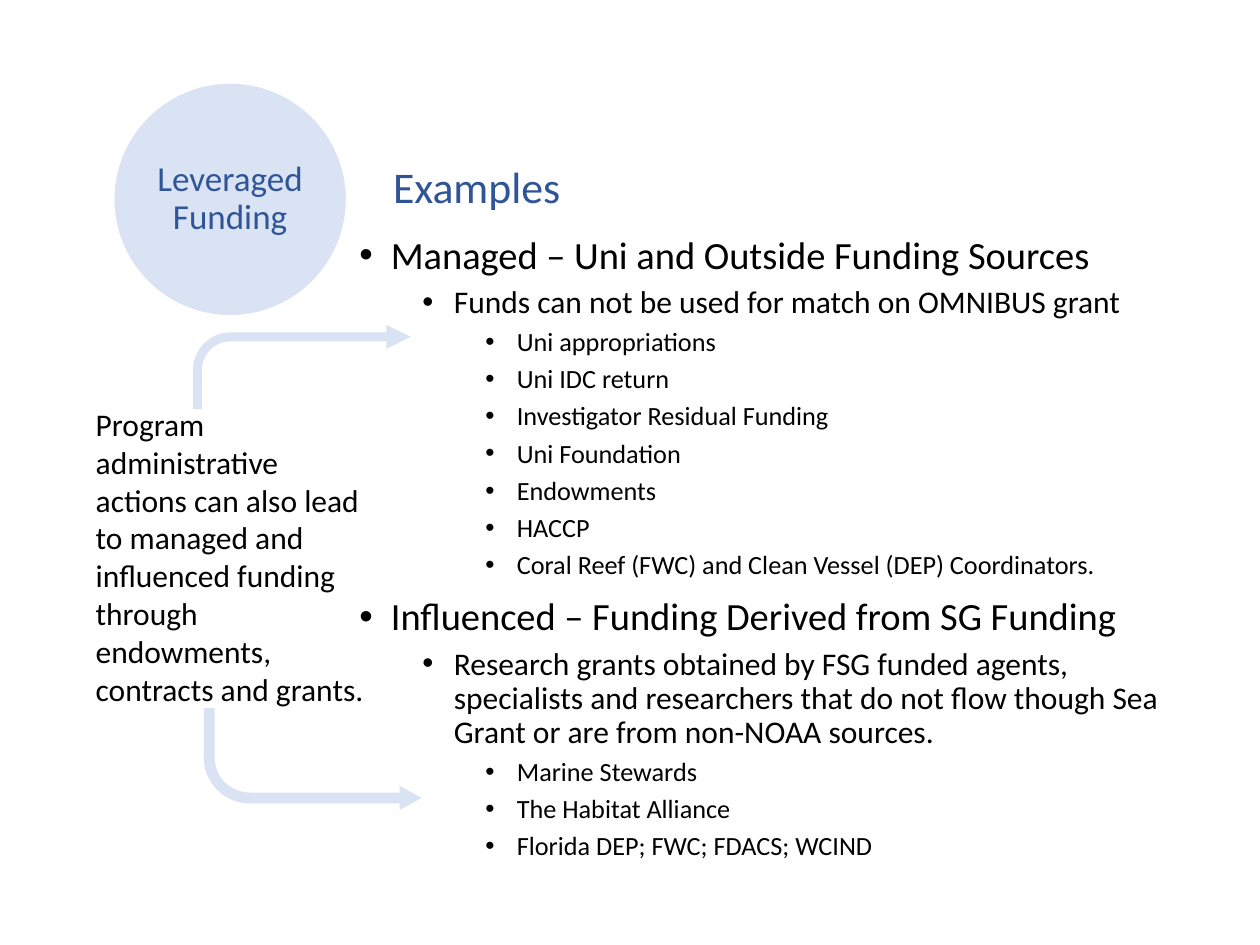
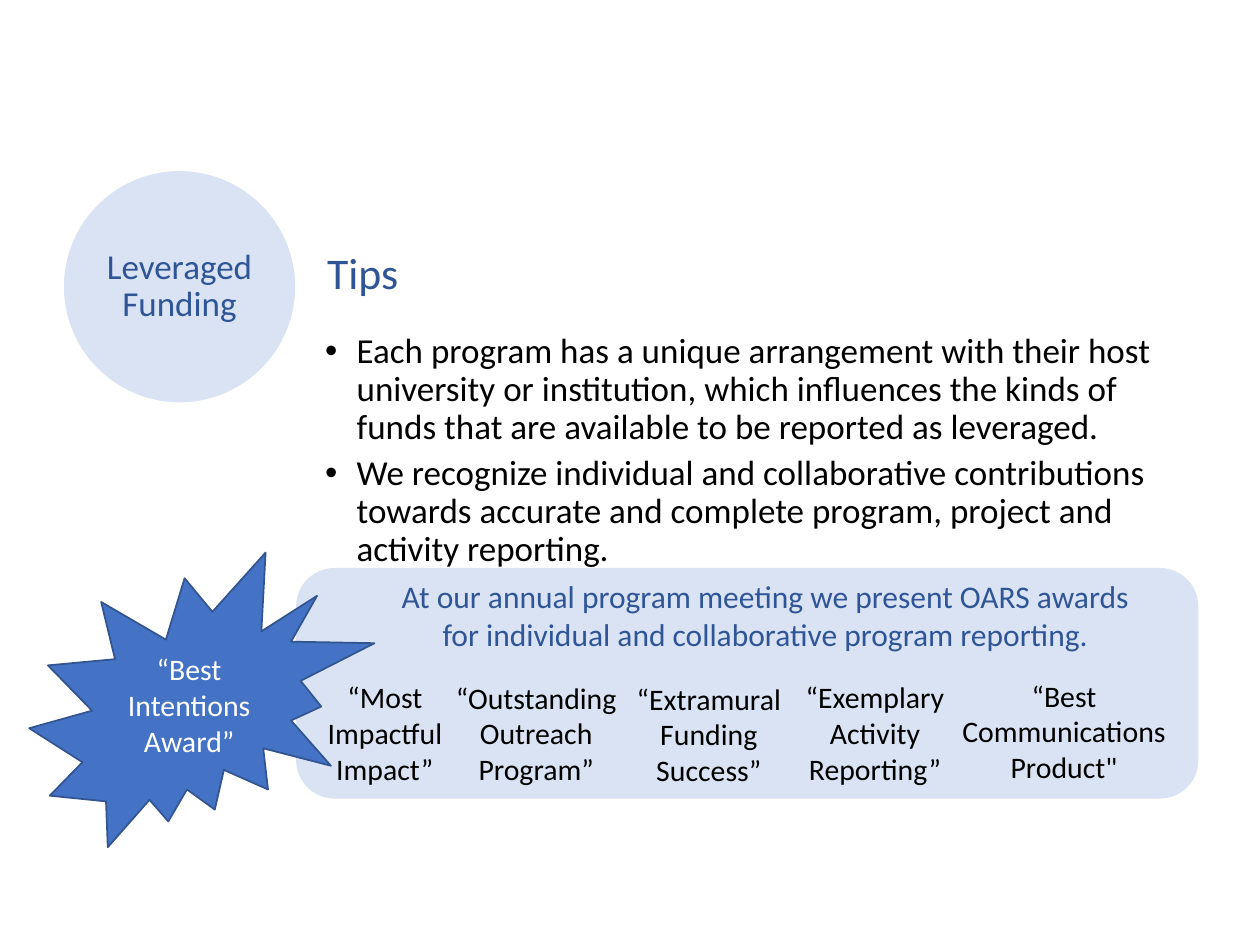
from dataclasses import dataclass

from lxml.etree import SubElement
from pptx import Presentation
from pptx.dml.color import RGBColor
from pptx.enum.shapes import MSO_SHAPE
from pptx.enum.text import MSO_ANCHOR, MSO_AUTO_SIZE, PP_ALIGN
from pptx.oxml.ns import qn
from pptx.util import Cm, Pt


@dataclass(frozen=True)
class Theme:
    font: str = "Calibri"
    pale: str = "DAE3F3"
    accent: str = "4472C4"
    accent_edge: str = "325491"
    heading: str = "2F5597"
    text: str = "000000"
    white: str = "FFFFFF"
    title_size: int = 25
    badge_size: int = 20
    note_size: int = 18
    award_size: int = 17
    list_sizes: tuple = (22, 18, 15)
    tip_size: int = 20


THEME = Theme()


@dataclass(frozen=True)
class Box:
    """Place and size in centimetres."""
    x: float
    y: float
    w: float
    h: float

    def lengths(self):
        return Cm(self.x), Cm(self.y), Cm(self.w), Cm(self.h)


@dataclass(frozen=True)
class Item:
    level: int
    text: str


@dataclass(frozen=True)
class Award:
    text: str
    box: Box


@dataclass(frozen=True)
class Arrow:
    box: Box
    adjustments: tuple
    flipped: bool = False


# Slide content
FUNDING_ITEMS = [
    Item(0, "Managed – Uni and Outside Funding Sources"),
    Item(1, "Funds can not be used for match on OMNIBUS grant"),
    Item(2, "Uni appropriations"),
    Item(2, "Uni IDC return"),
    Item(2, "Investigator Residual Funding"),
    Item(2, "Uni Foundation"),
    Item(2, "Endowments"),
    Item(2, "HACCP"),
    Item(2, "Coral Reef (FWC) and Clean Vessel (DEP) Coordinators."),
    Item(0, "Influenced – Funding Derived from SG Funding"),
    Item(1, "Research grants obtained by FSG funded agents, specialists and "
            "researchers that do not flow though Sea Grant or are from "
            "non-NOAA sources."),
    Item(2, "Marine Stewards"),
    Item(2, "The Habitat Alliance"),
    Item(2, "Florida DEP; FWC; FDACS; WCIND"),
]
ARROWS = [
    Arrow(Box(4.11, 14.27, 4.39, 2.06), (0.106, 0.118, 0.216, 0.447), True),
    Arrow(Box(3.89, 6.55, 4.39, 1.7), (0.106, 0.142, 0.289, 0.447)),
]
TIPS = [
    Item(2, "Each program has a unique arrangement with their host university "
            "or institution, which influences the kinds of funds that are "
            "available to be reported as leveraged."),
    Item(2, "We recognize individual and collaborative contributions towards "
            "accurate and complete program, project and activity reporting."),
]
AWARDS = [
    Award("“Most Impactful Impact”", Box(5.97, 13.56, 3.58, 2.44)),
    Award("“Outstanding\nOutreach\nProgram”", Box(8.92, 13.57, 3.78, 2.44)),
    Award("“Extramural\nFunding\nSuccess”", Box(12.5, 13.59, 3.58, 2.44)),
    Award("“Exemplary Activity Reporting”", Box(15.85, 13.56, 3.58, 2.44)),
    Award("“Best Communications Product\"", Box(19, 13.53, 4.9, 2.44)),
]


def rgb(color: str) -> RGBColor:
    return RGBColor.from_string(color)


def format_runs(p, size: int, color: str) -> None:
    for r in p.runs:
        r.font.name = THEME.font
        r.font.size = Pt(size)
        r.font.color.rgb = rgb(color)


def write(sp, text: str, size: int, color: str, align=PP_ALIGN.LEFT) -> None:
    tf = sp.text_frame
    tf.word_wrap = True
    tf.text = text
    for p in tf.paragraphs:
        p.alignment = align
        format_runs(p, size, color)


def place(sp, box: Box) -> None:
    sp.left, sp.top, sp.width, sp.height = box.lengths()


def add_figure(s, kind, box: Box, fill: str, edge: str = ""):
    sp = s.shapes.add_shape(kind, *box.lengths())
    sp.shadow.inherit = False
    sp.fill.solid()
    sp.fill.fore_color.rgb = rgb(fill)
    if edge:
        sp.line.color.rgb = rgb(edge)
        sp.line.width = Pt(1)
    else:
        sp.line.fill.background()
    return sp


def add_note(s, box: Box, text: str, size: int, color: str, align=PP_ALIGN.LEFT):
    sp = s.shapes.add_textbox(*box.lengths())
    write(sp, text, size, color, align)
    return sp


def add_badge(s, x: float, y: float) -> None:
    sp = add_figure(s, MSO_SHAPE.OVAL, Box(x, y, 4.7, 4.7), THEME.pale, THEME.white)
    write(sp, "Leveraged Funding", THEME.badge_size, THEME.heading, PP_ALIGN.CENTER)
    tf = sp.text_frame
    tf.vertical_anchor = MSO_ANCHOR.MIDDLE
    tf.margin_left = tf.margin_right = tf.margin_top = tf.margin_bottom = 0
    tf.paragraphs[0].line_spacing = 0.9


def set_title(s, text: str, box: Box) -> None:
    sp = s.shapes.title
    place(sp, box)
    write(sp, text, THEME.title_size, THEME.heading)
    tf = sp.text_frame
    tf.word_wrap = False
    tf.auto_size = MSO_AUTO_SIZE.NONE
    tf.vertical_anchor = MSO_ANCHOR.TOP


def set_bullet(p, level: int) -> None:
    pPr = p._p.get_or_add_pPr()
    pPr.set("marL", str(Cm(0.635 + 1.27 * level)))
    pPr.set("indent", str(-Cm(0.635)))
    SubElement(pPr, qn("a:buFont")).set("typeface", "Arial")
    SubElement(pPr, qn("a:buChar")).set("char", "•")


def set_list(s, items: list[Item], box: Box, sizes: tuple) -> None:
    sp = s.placeholders[1]
    place(sp, box)
    tf = sp.text_frame
    tf.text = "\n".join(item.text for item in items)
    tf.auto_size = MSO_AUTO_SIZE.NONE
    for p, item in zip(tf.paragraphs, items):
        p.level = item.level
        p.line_spacing = 0.9
        p.space_before = Pt(5 if item.level else 10)
        set_bullet(p, item.level)
        format_runs(p, sizes[item.level], THEME.text)


def add_arrow(s, arrow: Arrow) -> None:
    sp = add_figure(s, MSO_SHAPE.BENT_ARROW, arrow.box, THEME.pale)
    for i, value in enumerate(arrow.adjustments):
        sp.adjustments[i] = value
    if arrow.flipped:
        sp._element.spPr.find(qn("a:xfrm")).set("flipV", "1")


def build_examples(prs) -> None:
    s = prs.slides.add_slide(prs.slide_layouts[1])
    set_title(s, "Examples", Box(7.67, 3.1, 3.94, 1.32))
    set_list(s, FUNDING_ITEMS, Box(6.99, 4.63, 17.3, 12.9), THEME.list_sizes)
    add_badge(s, 2.29, 1.67)
    add_note(s, Box(1.68, 8.04, 5.99, 6.4),
             "Program administrative actions can also lead to managed and "
             "influenced funding through endowments, contracts and grants.",
             THEME.note_size, THEME.text)
    for arrow in ARROWS:
        add_arrow(s, arrow)


def build_tips(prs) -> None:
    s = prs.slides.add_slide(prs.slide_layouts[1])
    set_title(s, "Tips", Box(6.34, 4.82, 1.96, 1.32))
    set_list(s, TIPS, Box(3.76, 6.59, 20.37, 5.86), (THEME.tip_size,) * 3)
    add_badge(s, 1.27, 3.43)

    # Awards panel, kept behind the list
    panel = add_figure(s, MSO_SHAPE.ROUNDED_RECTANGLE,
                       Box(5.97, 11.45, 18.19, 4.65), THEME.pale)
    s.shapes.title._element.addprevious(panel._element)
    intro = add_note(s, Box(6.45, 11.51, 16.69, 1.8),
                     "At our annual program meeting we present OARS awards for "
                     "individual and collaborative program reporting.",
                     THEME.note_size, THEME.heading, PP_ALIGN.CENTER)
    intro.text_frame.paragraphs[0]._p.get_or_add_pPr().set("marL", str(Cm(1.27)))
    for award in AWARDS:
        add_note(s, award.box, award.text, THEME.award_size, THEME.text,
                 PP_ALIGN.CENTER)

    # Starburst
    burst = add_figure(s, MSO_SHAPE.EXPLOSION2, Box(0.59, 11.14, 6.96, 5.94),
                       THEME.accent, THEME.accent_edge)
    write(burst, "“Best Intentions Award”", THEME.award_size, THEME.white,
          PP_ALIGN.CENTER)
    burst.text_frame.vertical_anchor = MSO_ANCHOR.MIDDLE


def main() -> None:
    prs = Presentation()
    prs.slide_width, prs.slide_height = Cm(25.4), Cm(19.05)
    build_examples(prs)
    build_tips(prs)
    prs.save("out.pptx")


if __name__ == "__main__":
    main()
